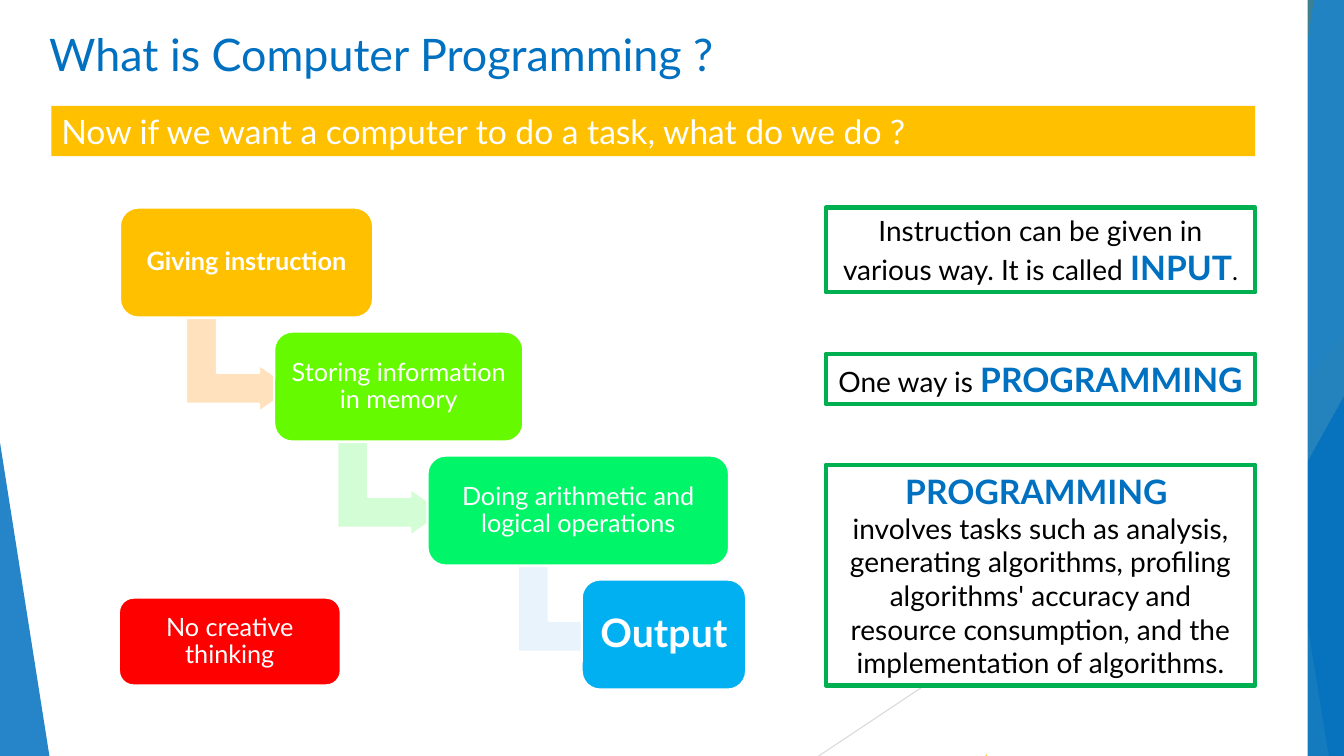
from dataclasses import dataclass

from lxml.etree import SubElement
from pptx import Presentation
from pptx.dml.color import RGBColor
from pptx.enum.shapes import MSO_CONNECTOR as Connector, MSO_SHAPE as Shape
from pptx.enum.text import MSO_ANCHOR as Anchor, PP_ALIGN as Align
from pptx.oxml.ns import qn
from pptx.util import Inches, Pt

COLUMNS, ROWS = 13.33, 7.5
CELL = Inches(1)
FONT = "Lato"

WHITE = RGBColor(0xFF, 0xFF, 0xFF)
BLACK = RGBColor(0x00, 0x00, 0x00)
BLUE = RGBColor(0x00, 0x70, 0xC0)
LIGHT_BLUE = RGBColor(0x40, 0xAF, 0xFF)
SKY = RGBColor(0x00, 0xB0, 0xF0)
AMBER = RGBColor(0xFF, 0xC0, 0x00)
BROWN = RGBColor(0xBF, 0x90, 0x00)
LIME = RGBColor(0x66, 0xFA, 0x00)
MINT = RGBColor(0x00, 0xF5, 0x69)
RED = RGBColor(0xFF, 0x00, 0x00)
GREEN = RGBColor(0x00, 0xB0, 0x50)
PALE_ORANGE = RGBColor(0xFF, 0xE2, 0xBD)
PALE_GREEN = RGBColor(0xD3, 0xFD, 0xD4)
PALE_BLUE = RGBColor(0xE8, 0xF3, 0xFC)
GRAY = RGBColor(0xBF, 0xBF, 0xBF)
LIGHT_GRAY = RGBColor(0xD9, 0xD9, 0xD9)


@dataclass(frozen=True)
class Area:
    column: float
    row: float
    columns: float
    rows: float

    def emu(self) -> list[int]:
        return [grid(n) for n in (self.column, self.row, self.columns, self.rows)]


@dataclass(frozen=True)
class Ray:
    start: tuple[float, float]
    end: tuple[float, float]
    color: RGBColor


@dataclass(frozen=True)
class Ribbon:
    top: float
    bottom: float
    color: RGBColor
    opacity: int


@dataclass(frozen=True)
class Wedge:
    area: Area
    apex: float
    color: RGBColor
    opacity: int


@dataclass(frozen=True)
class Words:
    text: str
    size: int
    color: RGBColor
    bold: bool = False


@dataclass(frozen=True)
class Step:
    area: Area
    color: RGBColor
    words: Words


@dataclass(frozen=True)
class Turn:
    column: float
    color: RGBColor


@dataclass(frozen=True)
class Note:
    row: float
    rows: float
    paragraphs: list[list[Words]]


STEP_TOP, STEP_PITCH, STEP_ROWS = 2.06, 1.23, 1.09
TURN_OFFSET = 1.03
EDGE = COLUMNS

RAYS = [
    Ray((10.25, 0), (11.58, ROWS), GRAY),
    Ray((EDGE, 4.03), (8.12, ROWS), LIGHT_GRAY),
]
BACKDROP = [
    Ribbon(12.28, 10.04, BLUE, 30),
    Ribbon(10.5, 11.83, BLUE, 20),
    Wedge(Area(9.77, 3.33, 3.56, 4.17), 1, AMBER, 72),
    Ribbon(10.21, 12.91, BROWN, 70),
    Ribbon(13.03, 11.92, LIGHT_BLUE, 70),
    Ribbon(11.96, 13.18, BLUE, 65),
    Wedge(Area(11.34, 3.93, 1.99, 3.57), 1, BLUE, 80),
    Wedge(Area(0, 4.39, 0.49, 3.11), 0, BLUE, 85),
]


def step_area(index: int, column: float, columns: float) -> Area:
    return Area(column, STEP_TOP + index * STEP_PITCH, columns, STEP_ROWS)


STEPS = [
    Step(step_area(0, 1.19, 2.51), AMBER, Words("Giving instruction", 18, WHITE, True)),
    Step(step_area(1, 2.72, 2.47), LIME, Words("Storing information in memory", 18, WHITE)),
    Step(step_area(2, 4.24, 2.99), MINT, Words("Doing arithmetic and logical operations", 18, WHITE)),
    Step(step_area(3, 5.77, 1.63), SKY, Words("Output", 28, WHITE, True)),
    Step(Area(1.18, 5.93, 2.2, 0.87), RED, Words("No creative thinking", 18, WHITE)),
]
TURNS = [Turn(1.91, PALE_ORANGE), Turn(3.41, PALE_GREEN), Turn(5.2, PALE_BLUE)]
NOTES = [
    Note(2.06, 0.84, [[
        Words("Instruction can be given in various way. It is called ", 20, BLACK),
        Words("INPUT", 24, BLUE, True),
        Words(".", 18, BLACK),
    ]]),
    Note(3.51, 0.5, [[Words("One way is ", 20, BLACK), Words("PROGRAMMING", 24, BLUE, True)]]),
    Note(4.61, 2.19, [
        [Words("PROGRAMMING ", 24, BLUE, True)],
        [Words("involves tasks such as analysis, generating algorithms, profiling algorithms' "
               "accuracy and resource consumption, and the implementation of algorithms.", 20, BLACK)],
    ]),
]


def grid(cells: float) -> int:
    return round(cells * CELL)


def paint(shape, fill: RGBColor, line: RGBColor | None = None, width: float = 1.5, opacity: int = 100):
    shape.shadow.inherit = False
    shape.fill.solid()
    shape.fill.fore_color.rgb = fill
    if opacity < 100:
        color = shape.fill._xPr.find(qn("a:solidFill"))[0]
        SubElement(color, qn("a:alpha")).set("val", str(opacity * 1000))
    if line is None:
        shape.line.fill.background()
    else:
        shape.line.color.rgb = line
        shape.line.width = Pt(width)
    return shape


def write(shape, paragraphs: list[list[Words]], *, align=Align.LEFT, spacing: float = 1.0,
          inset: tuple[float, float] = (0.1, 0.05)) -> None:
    frame = shape.text_frame
    frame.word_wrap = True
    frame.vertical_anchor = Anchor.MIDDLE
    frame.margin_left = frame.margin_right = Inches(inset[0])
    frame.margin_top = frame.margin_bottom = Inches(inset[1])
    for index, line in enumerate(paragraphs):
        paragraph = frame.add_paragraph() if index else frame.paragraphs[0]
        paragraph.alignment = align
        paragraph.line_spacing = spacing
        for words in line:
            run = paragraph.add_run()
            run.text = words.text
            run.font.name = FONT
            run.font.size = Pt(words.size)
            run.font.bold = words.bold
            run.font.color.rgb = words.color


def draw_ray(shapes, ray: Ray) -> None:
    line = shapes.add_connector(Connector.STRAIGHT, *map(grid, ray.start + ray.end))
    line.line.color.rgb = ray.color
    line.line.width = Pt(0.75)
    SubElement(line._element.spPr, qn("a:effectLst"))


def draw_backdrop(shapes, part: Ribbon | Wedge) -> None:
    if isinstance(part, Ribbon):
        outline = shapes.build_freeform(grid(part.top), 0)
        corners = [(EDGE, 0), (EDGE, ROWS), (part.bottom, ROWS)]
        outline.add_line_segments([(grid(x), grid(y)) for x, y in corners])
        shape = outline.convert_to_shape()
    else:
        shape = shapes.add_shape(Shape.ISOSCELES_TRIANGLE, *part.area.emu())
        shape.adjustments[0] = part.apex
    paint(shape, part.color, opacity=part.opacity)


def draw_turn(shapes, index: int, turn: Turn) -> None:
    area = Area(turn.column, STEP_TOP + TURN_OFFSET + index * STEP_PITCH, 0.93, 1.06)
    arrow = paint(shapes.add_shape(Shape.BENT_UP_ARROW, *area.emu()), turn.color, WHITE)
    arrow.rotation = 90
    for position, share in enumerate((0.33, 0.25, 0.36)):
        arrow.adjustments[position] = share


def draw_step(shapes, step: Step) -> None:
    card = paint(shapes.add_shape(Shape.ROUNDED_RECTANGLE, *step.area.emu()), step.color, WHITE)
    write(card, [[step.words]], align=Align.CENTER, spacing=0.9, inset=(0.07, 0.07))


def draw_note(shapes, note: Note) -> None:
    area = Area(8.19, note.row, 4.26, note.rows)
    box = paint(shapes.add_shape(Shape.RECTANGLE, *area.emu()), WHITE, GREEN, 3)
    write(box, note.paragraphs, align=Align.CENTER)


def main() -> None:
    deck = Presentation()
    deck.slide_width, deck.slide_height = grid(COLUMNS), grid(ROWS)
    shapes = deck.slides.add_slide(deck.slide_layouts[6]).shapes
    for ray in RAYS:
        draw_ray(shapes, ray)
    for part in BACKDROP:
        draw_backdrop(shapes, part)
    paint(shapes.add_shape(Shape.RECTANGLE, *Area(9.79, 0, 3.18, ROWS).emu()), WHITE)
    title = shapes.add_textbox(*Area(0.39, 0.2, 9.4, 0.66).emu())
    write(title, [[Words("What is Computer Programming ?", 32, BLUE)]])
    question = paint(shapes.add_shape(Shape.RECTANGLE, *Area(0.51, 1.05, 11.94, 0.5).emu()), AMBER)
    write(question, [[Words("Now if we want a computer to do a task, what do we do ?", 24, WHITE)]])
    for index, turn in enumerate(TURNS):
        draw_turn(shapes, index, turn)
    for step in STEPS:
        draw_step(shapes, step)
    for note in NOTES:
        draw_note(shapes, note)
    deck.save("out.pptx")


if __name__ == "__main__":
    main()
